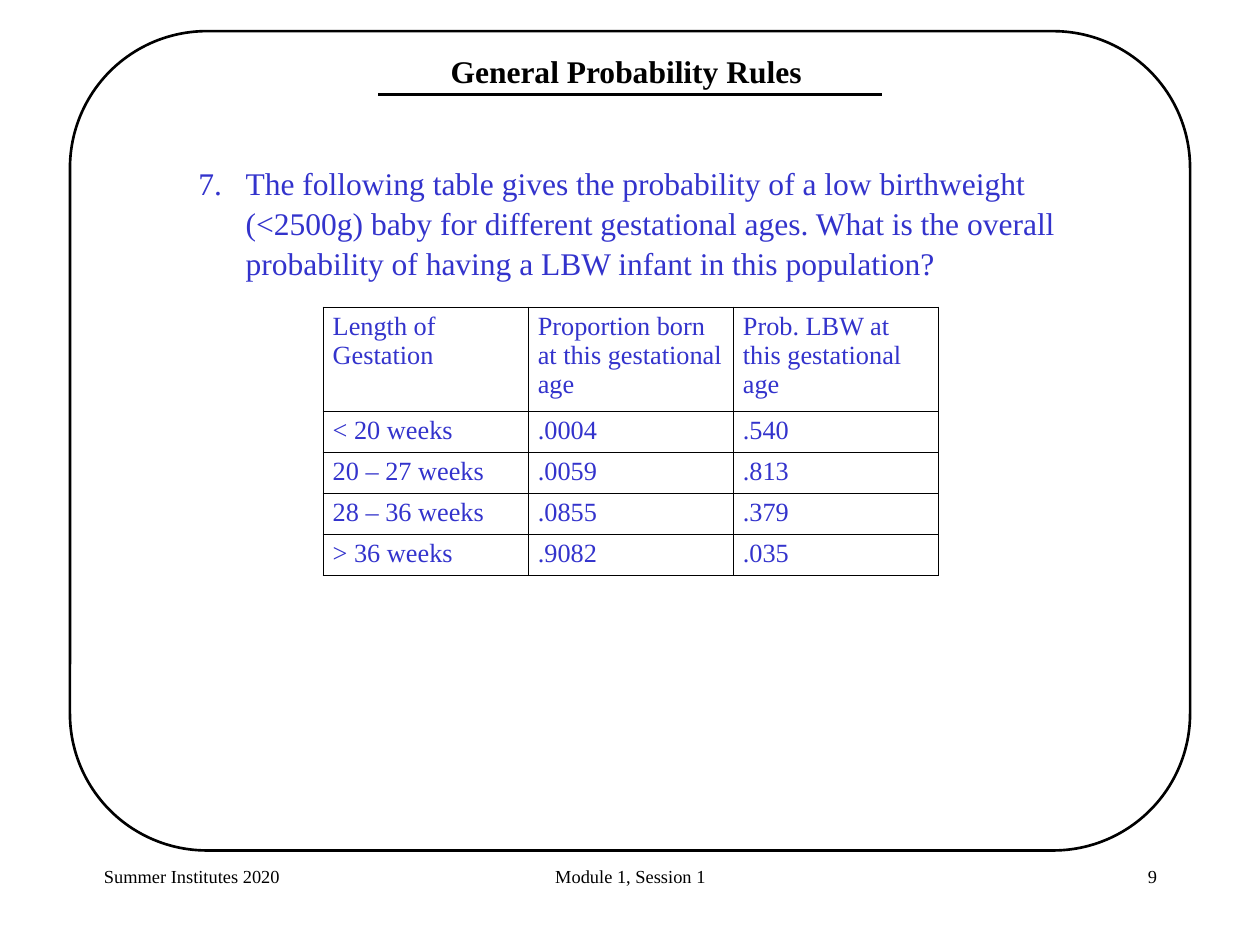
from dataclasses import dataclass

from lxml.etree import SubElement
from pptx import Presentation
from pptx.dml.color import RGBColor
from pptx.enum.shapes import MSO_CONNECTOR, MSO_SHAPE
from pptx.enum.text import MSO_ANCHOR, MSO_AUTO_SIZE, PP_ALIGN
from pptx.oxml.ns import qn
from pptx.util import Inches, Pt


@dataclass(frozen=True)
class Theme:
    font: str = "Times New Roman"
    ink: str = "000000"
    blue: str = "3333CC"
    head: int = 24
    cell: int = 20
    foot: int = 14


THEME = Theme()
WIDTH, HEIGHT = 13.33, 10

TITLE = "General Probability Rules"
START = 7
QUESTION = (
    "The following table gives the probability of a low birthweight "
    "(<2500g) baby for different gestational ages. What is the overall "
    "probability of having a LBW infant in this population?"
)
ROWS = [
    ("Length of Gestation", "Proportion born at this gestational age",
     "Prob. LBW at this gestational age"),
    ("< 20 weeks", ".0004", ".540"),
    ("20 – 27 weeks", ".0059", ".813"),
    ("28 – 36 weeks", ".0855", ".379"),
    ("> 36 weeks", ".9082", ".035"),
]
# text, alignment, left edge, width
FOOTERS = [
    ("Summer Institutes 2020", PP_ALIGN.LEFT, 1, 2.78),
    ("Module 1, Session 1", PP_ALIGN.CENTER, 4.56, 4.22),
    ("9", PP_ALIGN.RIGHT, 9.56, 2.78),
]
FOOT_TOP, FOOT_HIGH = 9.11, 0.67
TABLE_LEFT, TABLE_TOP, COL_WIDE = 3.42, 3.25, 2.17
HEAD_HIGH, ROW_HIGH = 1.1, 0.43


def box(left, top, width, height):
    return [Inches(n) for n in (left, top, width, height)]


def write(frame, text, size, color, align=PP_ALIGN.LEFT, bold=False):
    frame.word_wrap = True
    para = frame.paragraphs[0]
    para.alignment = align
    run = para.add_run()
    run.text = text
    font = run.font
    font.name, font.size, font.bold = THEME.font, Pt(size), bold
    font.color.rgb = RGBColor.from_string(color)
    return para


def add_frame(slide):
    shape = slide.shapes.add_shape(
        MSO_SHAPE.ROUNDED_RECTANGLE, *box(0.74, 0.33, 11.85, 8.67))
    shape.adjustments[0] = 0.167
    shape.shadow.inherit = False
    shape.fill.background()
    shape.line.color.rgb = RGBColor.from_string(THEME.ink)
    shape.line.width = Pt(2)


def add_title(slide):
    title = slide.shapes.title
    title.left, title.top, title.width, title.height = box(4.5, 0.5, 4.25, 0.5)
    frame = title.text_frame
    frame.auto_size = MSO_AUTO_SIZE.NONE
    frame.vertical_anchor = MSO_ANCHOR.MIDDLE
    write(frame, TITLE, THEME.head, THEME.ink, PP_ALIGN.CENTER, True)

    rule = slide.shapes.add_connector(
        MSO_CONNECTOR.STRAIGHT, *box(4, 1, 9.33, 1))
    rule.line.color.rgb = RGBColor.from_string(THEME.ink)
    rule.line.width = Pt(3)
    SubElement(rule.element.spPr, qn("a:effectLst"))


def add_question(slide):
    frame = slide.shapes.add_textbox(*box(2, 1.67, 10.08, 4.54)).text_frame
    para = write(frame, QUESTION, THEME.head, THEME.blue)
    para.line_spacing = 1.05
    props = para._p.get_or_add_pPr()
    indent = Inches(0.5)
    props.set("marL", str(indent))
    props.set("indent", str(-indent))
    SubElement(props, qn("a:buFont"), typeface=THEME.font)
    SubElement(props, qn("a:buAutoNum"),
               type="arabicPeriod", startAt=str(START))


def outline(cell):
    """Draw the four cell borders, which must precede the fill in the XML."""
    props = cell._tc.get_or_add_tcPr()
    for side in ("lnL", "lnR", "lnT", "lnB"):
        line = SubElement(props, qn(f"a:{side}"), w=str(Pt(1)))
        fill = SubElement(line, qn("a:solidFill"))
        SubElement(fill, qn("a:srgbClr"), val=THEME.ink)


def add_grid(slide):
    count, cols = len(ROWS), len(ROWS[0])
    high = HEAD_HIGH + (count - 1) * ROW_HIGH
    table = slide.shapes.add_table(
        count, cols,
        *box(TABLE_LEFT, TABLE_TOP, cols * COL_WIDE, high)).table
    table.first_row = table.horz_banding = False
    for col in table.columns:
        col.width = Inches(COL_WIDE)
    for at, (row, texts) in enumerate(zip(table.rows, ROWS)):
        row.height = Inches(ROW_HIGH if at else HEAD_HIGH)
        for cell, text in zip(row.cells, texts):
            write(cell.text_frame, text, THEME.cell, THEME.blue)
            outline(cell)
            cell.fill.background()


def add_footers(slide):
    for text, align, left, width in FOOTERS:
        shape = slide.shapes.add_textbox(
            *box(left, FOOT_TOP, width, FOOT_HIGH))
        write(shape.text_frame, text, THEME.foot, THEME.ink, align)


def main():
    deck = Presentation()
    deck.slide_width, deck.slide_height = Inches(WIDTH), Inches(HEIGHT)
    slide = deck.slides.add_slide(deck.slide_layouts.get_by_name("Title Only"))
    for add in (add_frame, add_footers, add_title, add_question, add_grid):
        add(slide)
    deck.save("out.pptx")


if __name__ == "__main__":
    main()
